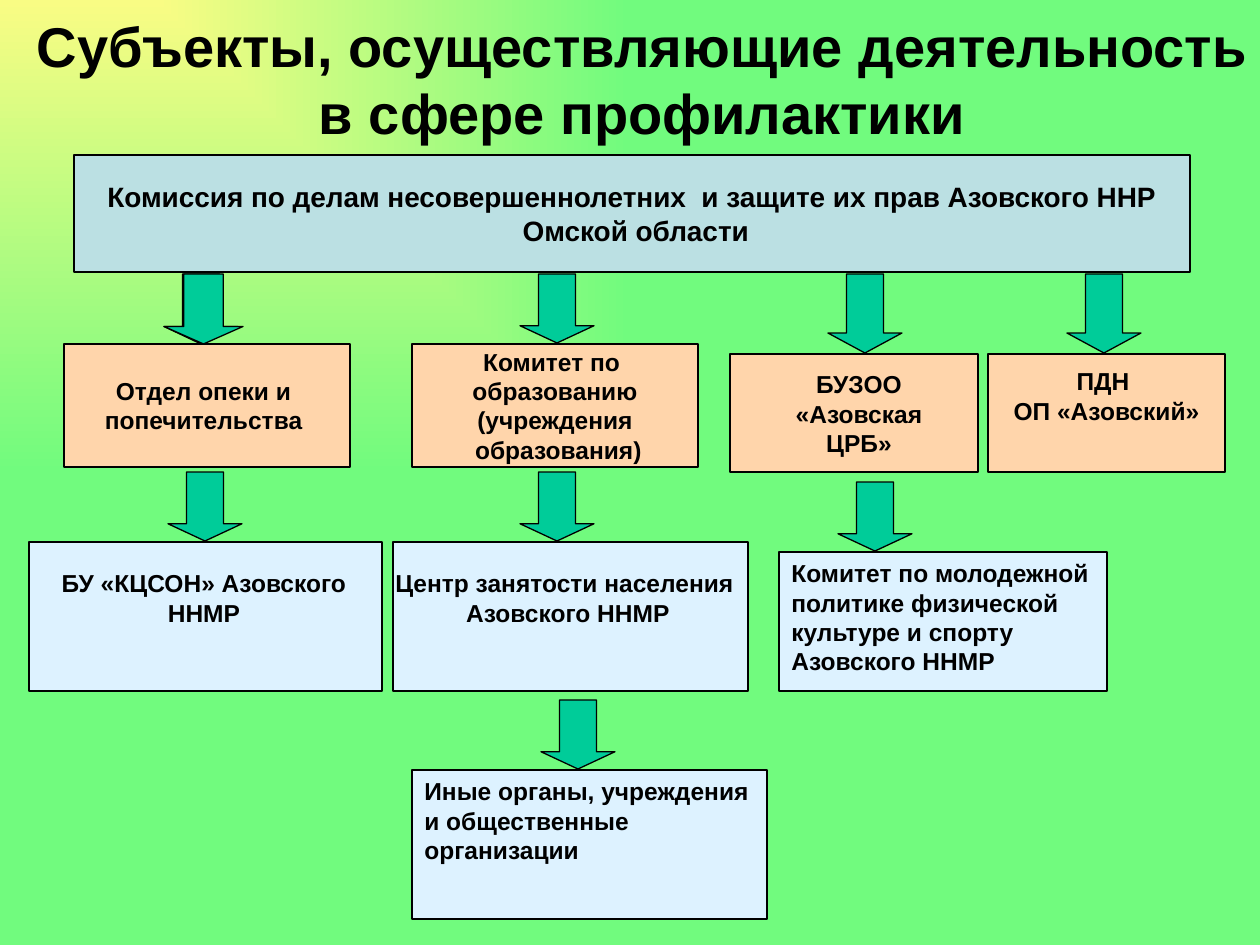
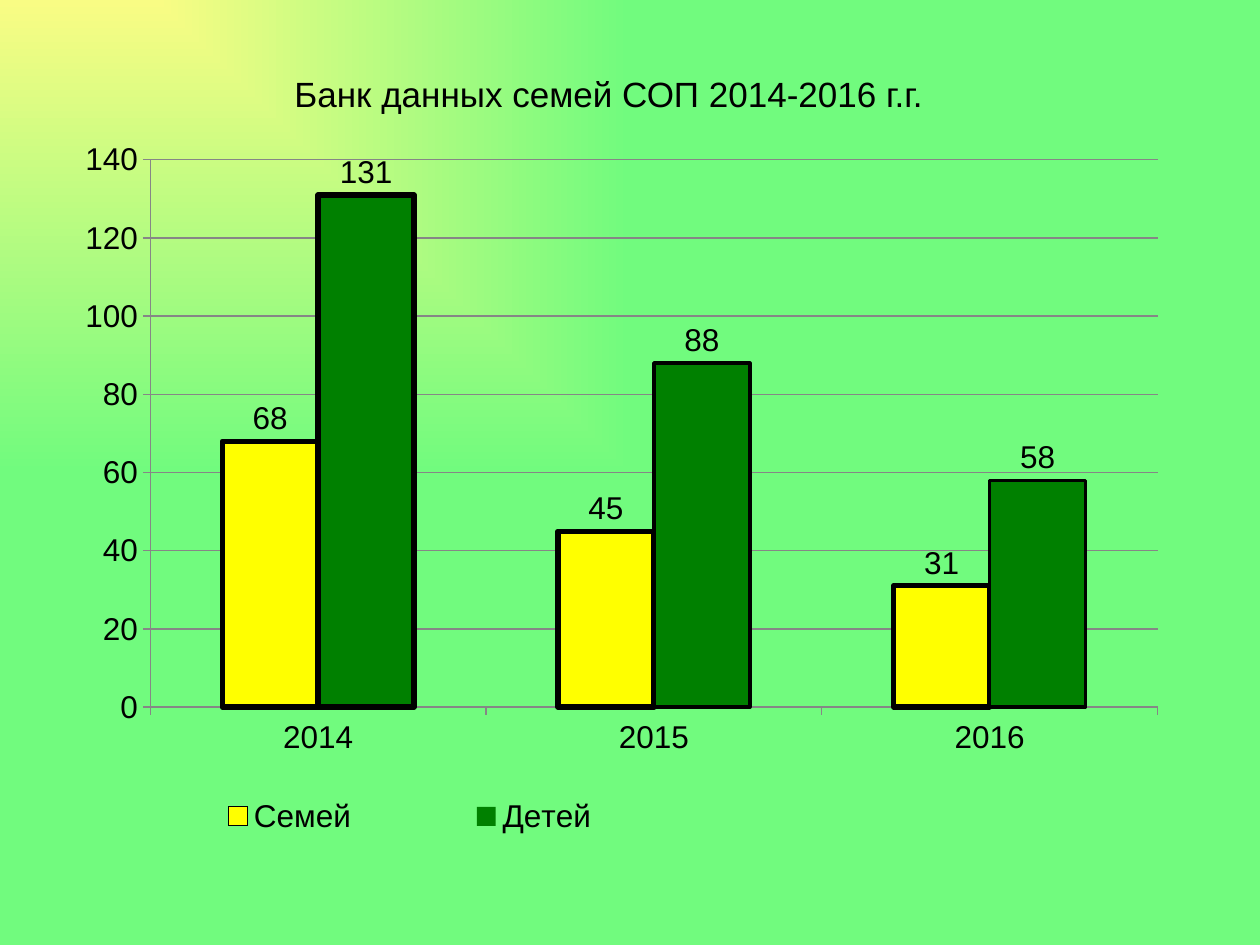
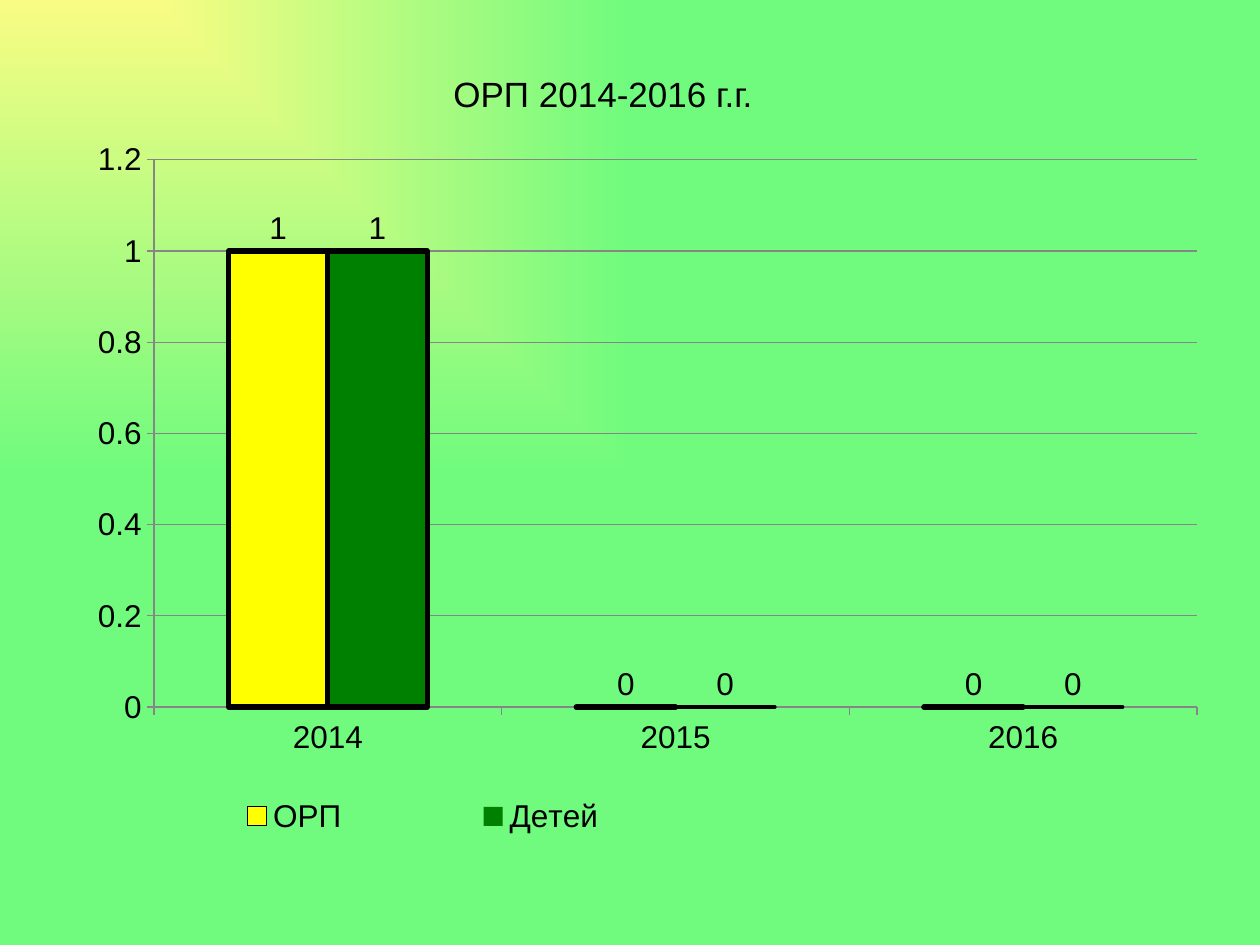
"""Build three slides about prevention bodies and family statistics."""

from dataclasses import dataclass, field

from lxml.etree import SubElement
from pptx import Presentation
from pptx.chart.axis import _BaseAxis
from pptx.chart.chart import Chart
from pptx.chart.data import CategoryChartData
from pptx.chart.series import BarSeries
from pptx.dml.color import RGBColor
from pptx.dml.line import LineFormat
from pptx.enum.chart import XL_CHART_TYPE, XL_LABEL_POSITION, XL_LEGEND_POSITION, XL_TICK_MARK
from pptx.enum.shapes import MSO_SHAPE
from pptx.enum.text import MSO_ANCHOR, PP_ALIGN
from pptx.oxml import parse_xml
from pptx.oxml.ns import nsdecls, qn
from pptx.oxml.xmlchemy import BaseOxmlElement
from pptx.presentation import Presentation as Deck
from pptx.shapes.autoshape import Shape
from pptx.slide import Slide, SlideMaster
from pptx.util import Emu, Pt

EMU_PER_PX = 914400 / 126


@dataclass(frozen=True)
class Theme:
    """Colours, font and type sizes of the deck."""

    font: str = "Arial"
    ink: str = "000000"
    glow: str = "F9FC84"
    background: str = "71FB7E"
    commission: str = "BBE0E3"
    department: str = "FFD5AB"
    body: str = "DDF2FF"
    arrow: str = "00CC99"
    grid: str = "868686"
    bars: tuple[str, str] = ("FFFF00", "008000")
    title_size: int = 32
    caption_size: int = 20
    chart_size: int = 18
    commission_size: int = 16
    label_size: int = 14
    outline: float = 0.75


THEME = Theme()


@dataclass(frozen=True)
class Area:
    """A rectangle in px."""

    left: int
    top: int
    width: int
    height: int

    def emu(self) -> tuple[Emu, Emu, Emu, Emu]:
        """Return the rectangle in EMU."""
        return px(self.left), px(self.top), px(self.width), px(self.height)


@dataclass(frozen=True)
class Label:
    """Text with its formatting."""

    text: str
    size: int = THEME.label_size
    bold: bool = True
    align: PP_ALIGN = PP_ALIGN.CENTER
    anchor: MSO_ANCHOR = MSO_ANCHOR.TOP
    wrap: bool = False


@dataclass(frozen=True)
class Block:
    """A filled, outlined shape that may hold a label."""

    area: Area
    fill: str
    label: Label | None = None
    kind: MSO_SHAPE = MSO_SHAPE.RECTANGLE
    adjustments: tuple[float, ...] = ()


@dataclass(frozen=True)
class Caption:
    """A free text box."""

    area: Area
    label: Label


@dataclass(frozen=True)
class Statistics:
    """A captioned column chart."""

    caption: Caption
    area: Area
    series: dict[str, tuple[int, ...]]
    maximum: float
    step: float
    years: tuple[str, ...] = field(default=("2014", "2015", "2016"))


def px(length: int) -> Emu:
    """Convert px to EMU."""
    return Emu(round(length * EMU_PER_PX))


def department(area: Area, text: str = "") -> Block:
    """Describe an orange department box."""
    label = Label(text, anchor=MSO_ANCHOR.MIDDLE) if text else None
    return Block(area, THEME.department, label)


def body(area: Area, text: str = "") -> Block:
    """Describe a pale blue box of a subordinate body."""
    label = Label(text, align=PP_ALIGN.LEFT, wrap=True) if text else None
    return Block(area, THEME.body, label, MSO_SHAPE.ROUNDED_RECTANGLE, (0,))


def arrow(left: int, top: int, height: int = 69, width: int = 74) -> Block:
    """Describe a down arrow, with a longer head on tall ones."""
    head = 0.27 if height > 75 else 0.25
    return Block(Area(left, top, width, height), THEME.arrow, None, MSO_SHAPE.DOWN_ARROW, (0.5, head))


def heading(area: Area, text: str) -> Caption:
    """Describe a chart heading."""
    return Caption(area, Label(text, THEME.caption_size, False, PP_ALIGN.LEFT, wrap=True))


TITLE = Caption(
    Area(0, 0, 1285, 157),
    Label(
        "Субъекты, осуществляющие деятельность в сфере профилактики",
        THEME.title_size,
        anchor=MSO_ANCHOR.MIDDLE,
        wrap=True,
    ),
)

BLOCKS = (
    Block(
        Area(74, 155, 1116, 117),
        THEME.commission,
        Label(
            "Комиссия по делам несовершеннолетних  и защите их прав Азовского ННР\n Омской области",
            THEME.commission_size,
            anchor=MSO_ANCHOR.MIDDLE,
        ),
    ),
    department(Area(64, 344, 286, 123), "Отдел опеки и \nпопечительства "),
    department(Area(412, 344, 286, 123), "Комитет по \nобразованию\n(учреждения\n образования)"),
    department(Area(730, 354, 248, 118)),
    department(Area(988, 354, 237, 118)),
    arrow(164, 274, 70),
    arrow(164, 274, 70, width=79),
    arrow(520, 274),
    arrow(828, 274, 79),
    arrow(1067, 274, 79),
    arrow(168, 472),
    arrow(520, 472),
    arrow(838, 482),
    arrow(541, 700),
    body(Area(29, 542, 353, 149)),
    body(Area(393, 542, 355, 149)),
    body(Area(779, 552, 328, 139), "Комитет по молодежной политике физической культуре и спорту Азовского ННМР"),
    body(Area(412, 770, 355, 149), "Иные органы, учреждения и общественные организации"),
)

CAPTIONS = (
    Caption(Area(48, 562, 312, 72), Label("БУ «КЦСОН» Азовского\n ННМР ")),
    Caption(Area(382, 562, 365, 72), Label("Центр занятости населения\n Азовского ННМР")),
    Caption(Area(748, 363, 222, 131), Label("БУЗОО\n «Азовская \nЦРБ»", wrap=True)),
    Caption(Area(1000, 360, 213, 72), Label("ПДН \nОП «Азовский»")),
)

STATISTICS = (
    Statistics(
        heading(Area(282, 66, 714, 55), "Банк данных семей СОП 2014-2016 г.г."),
        Area(44, 135, 1380, 753),
        {"Семей": (68, 45, 31), "Детей": (131, 88, 58)},
        maximum=140,
        step=20,
    ),
    Statistics(
        heading(Area(441, 66, 338, 55), "ОРП 2014-2016 г.г."),
        Area(44, 135, 1429, 753),
        {"ОРП": (1, 0, 0), "Детей": (1, 0, 0)},
        maximum=1.2,
        step=0.2,
    ),
)


def paint_background(master: SlideMaster) -> None:
    """Give every slide a gradient that spreads from the top left corner."""
    fill = master.background.fill
    fill.gradient()
    for stop, color in zip(fill.gradient_stops, (THEME.glow, THEME.background)):
        stop.color.rgb = RGBColor.from_string(color)
    gradient = master.element.xpath("./p:cSld/p:bg//a:gradFill")[0]
    direction = gradient.find(qn("a:lin"))
    spread = parse_xml(
        f'<a:path {nsdecls("a")} path="rect"><a:fillToRect r="100000" b="100000"/></a:path>'
    )
    gradient.replace(direction, spread)


def write_label(shape: Shape, label: Label) -> None:
    """Put a formatted label into a shape."""
    frame = shape.text_frame
    frame.text = label.text
    frame.word_wrap = label.wrap
    frame.vertical_anchor = label.anchor
    for paragraph in frame.paragraphs:
        paragraph.alignment = label.align
        for run in paragraph.runs:
            run.font.name = THEME.font
            run.font.size = Pt(label.size)
            run.font.bold = label.bold
            run.font.color.rgb = RGBColor.from_string(THEME.ink)


def set_line(line: LineFormat, color: str, width: float) -> None:
    """Set the colour and width of a line."""
    line.color.rgb = RGBColor.from_string(color)
    line.width = Pt(width)


def draw_block(slide: Slide, block: Block) -> None:
    """Draw a filled shape and its label."""
    shape = slide.shapes.add_shape(block.kind, *block.area.emu())
    shape.shadow.inherit = False
    shape.fill.solid()
    shape.fill.fore_color.rgb = RGBColor.from_string(block.fill)
    set_line(shape.line, THEME.ink, THEME.outline)
    for index, value in enumerate(block.adjustments):
        shape.adjustments[index] = value
    if block.label:
        write_label(shape, block.label)


def draw_caption(slide: Slide, caption: Caption) -> None:
    """Draw a free text box."""
    write_label(slide.shapes.add_textbox(*caption.area.emu()), caption.label)


def set_layout(
    parent: BaseOxmlElement, index: int, place: tuple[float, float, float, float], inner: bool = False
) -> None:
    """Place a chart part by fractions of the chart size."""
    for old in parent.findall(qn("c:layout")):
        parent.remove(old)
    layout = parse_xml(f'<c:layout {nsdecls("c")}><c:manualLayout/></c:layout>')
    manual = layout[0]
    values = {"layoutTarget": "inner"} if inner else {}
    values |= {"xMode": "edge", "yMode": "edge"}
    values |= dict(zip("xywh", map(str, place)))
    for name, value in values.items():
        SubElement(manual, qn(f"c:{name}")).set("val", value)
    parent.insert(index, layout)


def style_axis(axis: _BaseAxis) -> None:
    """Give an axis a grey line and outward ticks."""
    axis.major_tick_mark = XL_TICK_MARK.OUTSIDE
    axis.minor_tick_mark = XL_TICK_MARK.NONE
    set_line(axis.format.line, THEME.grid, THEME.outline)


def style_series(series: BarSeries, color: str) -> None:
    """Fill the bars and show their values above them."""
    series.format.fill.solid()
    series.format.fill.fore_color.rgb = RGBColor.from_string(color)
    series.invert_if_negative = False
    labels = series.data_labels
    labels.show_value = True
    labels.position = XL_LABEL_POSITION.OUTSIDE_END


def outline_bars(chart: Chart) -> None:
    """Outline the first series as a whole and the second bar by bar."""
    first, second = chart.plots[0].series
    set_line(first.format.line, THEME.ink, 3)
    for index, width in enumerate((3, 2, 2)):
        point = second.points[index].format
        point.fill.solid()
        point.fill.fore_color.rgb = RGBColor.from_string(THEME.bars[1])
        set_line(point.line, THEME.ink, width)


def draw_chart(slide: Slide, statistics: Statistics) -> None:
    """Draw a clustered column chart with its legend."""
    data = CategoryChartData()
    data.categories = statistics.years
    for name, values in statistics.series.items():
        data.add_series(name, values)
    frame = slide.shapes.add_chart(XL_CHART_TYPE.COLUMN_CLUSTERED, *statistics.area.emu(), data)
    chart = frame.chart
    chart.has_title = False
    chart.font.name = THEME.font
    chart.font.size = Pt(THEME.chart_size)
    chart.font.color.rgb = RGBColor.from_string(THEME.ink)

    plot = chart.plots[0]
    plot.vary_by_categories = False
    plot.gap_width = 150
    plot.overlap = 0
    for series, color in zip(plot.series, THEME.bars):
        style_series(series, color)
    outline_bars(chart)

    style_axis(chart.category_axis)
    value_axis = chart.value_axis
    style_axis(value_axis)
    value_axis.minimum_scale = 0
    value_axis.maximum_scale = statistics.maximum
    value_axis.major_unit = statistics.step
    value_axis.has_major_gridlines = True
    set_line(value_axis.major_gridlines.format.line, THEME.grid, THEME.outline)

    chart.has_legend = True
    legend = chart.legend
    legend.position = XL_LEGEND_POSITION.RIGHT
    legend.include_in_layout = False
    plot_area = chart.element.xpath("./c:chart/c:plotArea")[0]
    legend_element = chart.element.xpath("./c:chart/c:legend")[0]
    set_layout(plot_area, 0, (0.077, 0.033, 0.73, 0.727), inner=True)
    set_layout(legend_element, 1, (0.05, 0.87, 0.43, 0.07))


def add_blank_slide(presentation: Deck) -> Slide:
    """Add a slide with the blank layout."""
    return presentation.slides.add_slide(presentation.slide_layouts[6])


def main() -> None:
    """Build and save the presentation."""
    presentation = Presentation()
    presentation.slide_width, presentation.slide_height = px(1260), px(945)
    paint_background(presentation.slide_master)

    scheme_slide = add_blank_slide(presentation)
    draw_caption(scheme_slide, TITLE)
    for block in BLOCKS:
        draw_block(scheme_slide, block)
    for caption in CAPTIONS:
        draw_caption(scheme_slide, caption)

    for statistics in STATISTICS:
        chart_slide = add_blank_slide(presentation)
        draw_chart(chart_slide, statistics)
        draw_caption(chart_slide, statistics.caption)

    presentation.save("out.pptx")


if __name__ == "__main__":
    main()
